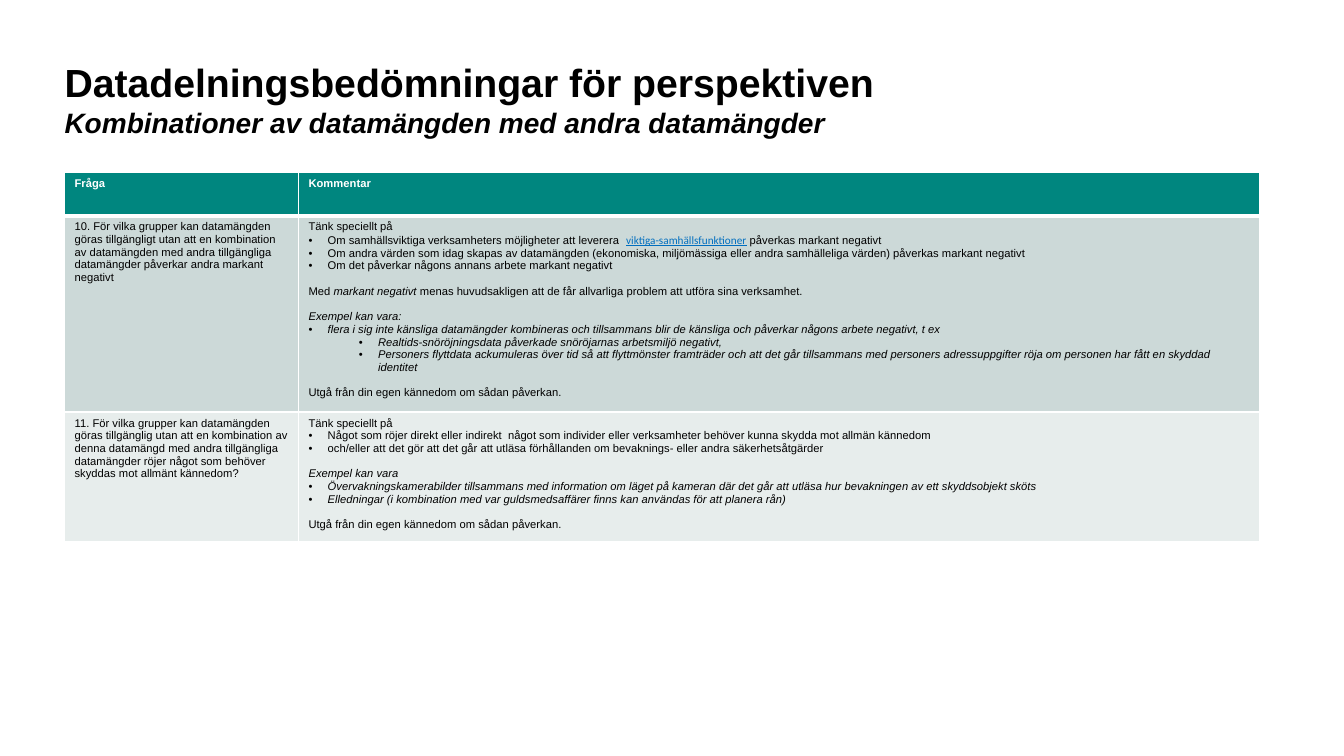
import pptx
import pptx.util
import pptx.dml.color
import pptx.enum.text
import pptx.oxml
import pptx.oxml.ns
from pptx.util import Inches

COLORS = {"teal": "00867F", "sage": "CCD9D8", "mist": "E7EDEC",
          "white": "FFFFFF", "black": "000000", "link": "006EBF"}
INDENTS = {"bullet": 0.19, "sub": 0.69}
HANGING = 0.19
BLANK_LINE = pptx.util.Pt(9.2)


def style_span(span, size, color="black", bold=False, italic=False, name="Arial"):
    span.font.size = pptx.util.Pt(size)
    span.font.name = name
    span.font.bold = bold
    span.font.italic = italic
    span.font.color.rgb = pptx.dml.color.RGBColor.from_string(COLORS[color])


def add_xml(parent, tag, attributes, inner=""):
    parent.append(pptx.oxml.parse_xml(
        f'<a:{tag} {pptx.oxml.ns.nsdecls("a")} {attributes}>{inner}</a:{tag}>'))


deck = pptx.Presentation()
deck.slide_width, deck.slide_height = Inches(13.33), Inches(7.5)
page = deck.slides.add_slide(deck.slide_layouts[6])

# Title and subtitle
box = page.shapes.add_textbox(Inches(0.64), Inches(0.52), Inches(12), Inches(0.91))
frame = box.text_frame
frame.word_wrap = True
frame.margin_left = frame.margin_right = frame.margin_top = frame.margin_bottom = 0
frame.vertical_anchor = pptx.enum.text.MSO_ANCHOR.MIDDLE
frame.text = ("Datadelningsbedömningar för perspektiven\v"
              "Kombinationer av datamängden med andra datamängder")
title, subtitle = frame.paragraphs[0].runs
style_span(title, 28, bold=True)
style_span(subtitle, 20, bold=True, italic=True)

# Table content: each paragraph is (kind, blank line before, spans), each span (text, style)
closing = ("plain", True, [("Utgå från din egen kännedom om sådan påverkan.", "normal")])
opening = ("plain", False, [("Tänk speciellt på", "normal")])
rows = [
    ("teal", 0.43, [
        [("plain", False, [("Fråga", "header")])],
        [("plain", False, [("Kommentar", "header")])],
    ]),
    ("sage", 1.87, [
        [("plain", False, [("10. För vilka grupper kan datamängden göras tillgängligt utan att en "
                            "kombination av datamängden med andra tillgängliga datamängder "
                            "påverkar andra markant negativt", "normal")])],
        [opening,
         ("bullet", False, [
             ("Om samhällsviktiga verksamheters möjligheter att leverera  ", "normal"),
             ("viktiga-samhällsfunktioner", "link"),
             (" påverkas markant negativt", "normal")]),
         ("bullet", False, [("Om andra värden som idag skapas av datamängden (ekonomiska, "
                             "miljömässiga eller andra samhälleliga värden) påverkas markant "
                             "negativt", "normal")]),
         ("bullet", False, [("Om det påverkar någons annans arbete markant negativt", "normal")]),
         ("plain", True, [
             ("Med ", "normal"),
             ("markant negativt ", "italic"),
             ("menas huvudsakligen att de får allvarliga problem att utföra sina verksamhet.",
              "normal")]),
         ("plain", True, [("Exempel kan vara:", "italic")]),
         ("bullet", False, [("flera i sig inte känsliga datamängder kombineras och tillsammans blir "
                             "de känsliga och påverkar någons arbete negativt, t ex", "italic")]),
         ("sub", False, [("Realtids-snöröjningsdata påverkade snöröjarnas arbetsmiljö negativt,",
                          "italic")]),
         ("sub", False, [("Personers flyttdata ackumuleras över tid så att flyttmönster framträder "
                          "och att det går tillsammans med personers adressuppgifter röja om "
                          "personen har fått en skyddad identitet", "italic")]),
         closing],
    ]),
    ("mist", 1.22, [
        [("plain", False, [("11. För vilka grupper kan datamängden göras tillgänglig utan att en "
                            "kombination av denna datamängd med andra tillgängliga datamängder "
                            "röjer något som behöver skyddas mot allmänt kännedom?", "normal")])],
        [opening,
         ("bullet", False, [("Något som röjer direkt eller indirekt  något som individer eller "
                             "verksamheter behöver kunna skydda mot allmän kännedom", "normal")]),
         ("bullet", False, [("och/eller att det gör att det går att utläsa förhållanden om "
                             "bevaknings- eller andra säkerhetsåtgärder", "normal")]),
         ("plain", True, [("Exempel kan vara", "italic")]),
         ("bullet", False, [("Övervakningskamerabilder tillsammans med information om läget på "
                             "kameran där det går att utläsa hur bevakningen av ett skyddsobjekt "
                             "sköts", "italic")]),
         ("bullet", False, [("Elledningar (i kombination med var guldsmedsaffärer finns kan "
                             "användas för att planera rån)", "italic")]),
         closing],
    ]),
]
span_styles = {"normal": {}, "italic": {"italic": True},
               "header": {"color": "white", "bold": True},
               "link": {"color": "link", "name": "Calibri"}}

# Table
table = page.shapes.add_table(len(rows), 2, Inches(0.64), Inches(1.71), Inches(11.85),
                              Inches(sum(height for _, height, _ in rows))).table
for column, width in zip(table.columns, (2.32, 9.53)):
    column.width = Inches(width)

for row_index, (fill, height, contents) in enumerate(rows):
    table.rows[row_index].height = Inches(height)
    for column_index, paragraphs in enumerate(contents):
        cell = table.cell(row_index, column_index)

        # White borders, thicker around the header's lower edge
        white = f'<a:solidFill><a:srgbClr val="{COLORS["white"]}"/></a:solidFill>'
        for side in ("lnL", "lnR", "lnT", "lnB"):
            thick = (row_index, side) in ((0, "lnB"), (1, "lnT"))
            line_width = pptx.util.Pt(3 if thick else 1)
            add_xml(cell._tc.get_or_add_tcPr(), side, f'w="{line_width}"', white)
        cell.fill.solid()
        cell.fill.fore_color.rgb = pptx.dml.color.RGBColor.from_string(COLORS[fill])

        # Paragraphs, bullets and spans
        for index, (kind, blank_before, spans) in enumerate(paragraphs):
            para = cell.text_frame.paragraphs[0] if index == 0 else cell.text_frame.add_paragraph()
            if blank_before:
                para.space_before = BLANK_LINE
            if kind in INDENTS:
                para.level = list(INDENTS).index(kind)
                properties = para._p.get_or_add_pPr()
                properties.set("marL", str(Inches(INDENTS[kind])))
                properties.set("indent", str(-Inches(HANGING)))
                add_xml(properties, "buFont", 'typeface="Arial"')
                add_xml(properties, "buChar", 'char="•"')
            for text, style in spans:
                span = para.add_run()
                span.text = text
                style_span(span, 8, **span_styles[style])
                span.font.underline = style == "link"

deck.save("out.pptx")
